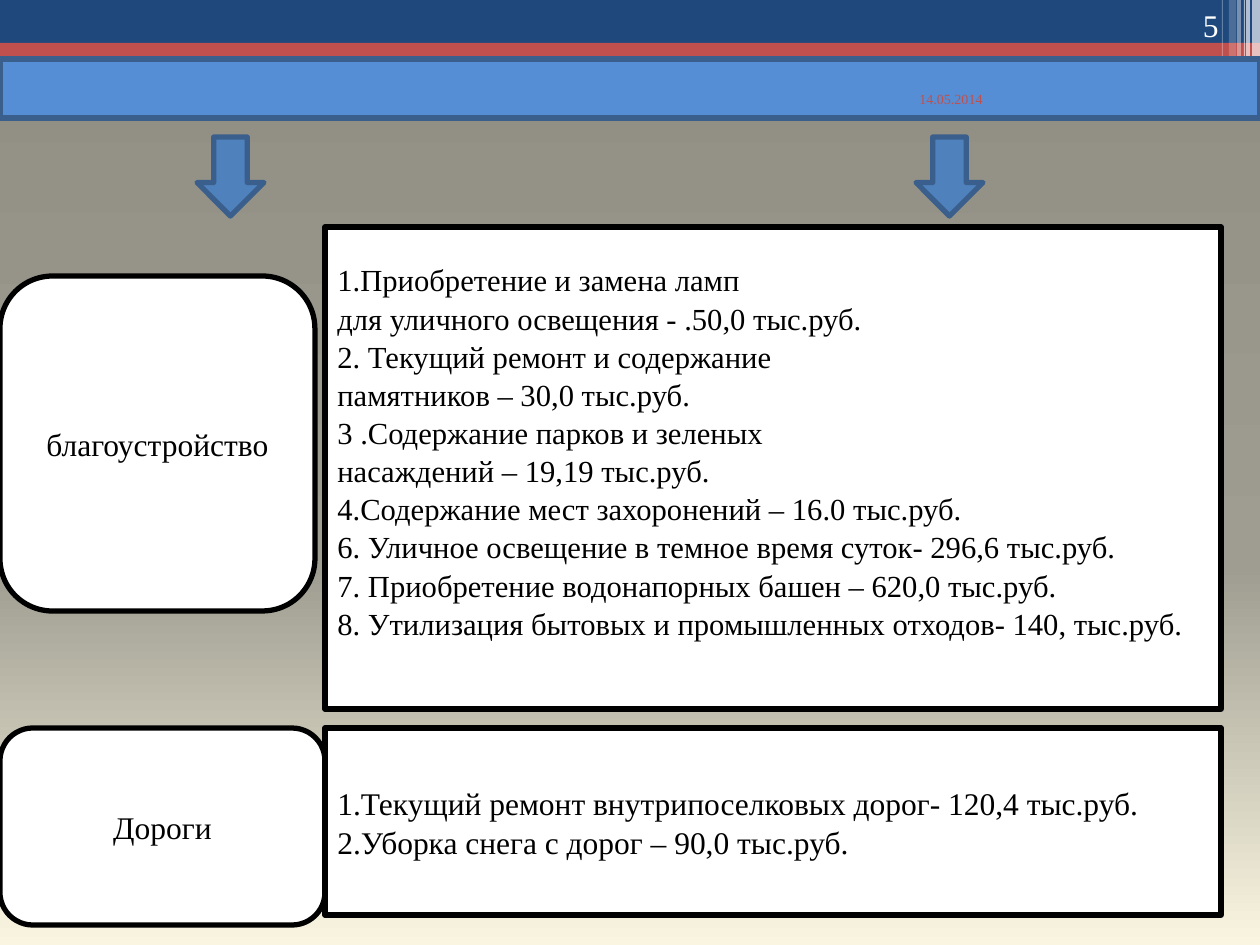
import copy

import pptx
import pptx.dml.color
import pptx.enum.shapes
import pptx.enum.text
import pptx.oxml.ns
import pptx.util
from lxml import etree

SCALE = 914400 / 126  # EMU in one px
KIND = pptx.enum.shapes.MSO_SHAPE
ALIGN = pptx.enum.text.PP_ALIGN
ANCHOR = pptx.enum.text.MSO_ANCHOR
QN = pptx.oxml.ns.qn
RGB = pptx.dml.color.RGBColor.from_string

deck = pptx.Presentation()
deck.slide_width, deck.slide_height = round(1260 * SCALE), round(945 * SCALE)
slide = deck.slides.add_slide(deck.slide_layouts[6])


def draw(kind, box, fill, edge=None, alpha=100):
    shape = slide.shapes.add_shape(kind, *(round(n * SCALE) for n in box))
    shape.shadow.inherit = False
    shape.fill.solid()
    shape.fill.fore_color.rgb = RGB(fill)
    if alpha < 100:
        tint = shape.fill._xPr.find(".//" + QN("a:srgbClr"))
        etree.SubElement(tint, QN("a:alpha"), val=str(alpha * 1000))
    if edge:
        shape.line.color.rgb = RGB(edge)
        shape.line.width = pptx.util.Pt(3)
    else:
        shape.line.fill.background()
    return shape


def write(shape, text, size=18, color="000000", align=ALIGN.LEFT,
          anchor=ANCHOR.MIDDLE, space=1.0, foot=6):
    frame = shape.text_frame
    frame.word_wrap = True
    frame.vertical_anchor = anchor
    frame.margin_bottom = round(foot * SCALE)
    frame.text = text
    for para in frame.paragraphs:
        para.alignment = align
        para.line_spacing = space
        para.font.size = pptx.util.Pt(size)
        para.font.name = "Times New Roman"
        para.font.color.rgb = RGB(color)


# Background gradient, top to bottom
back = slide.background.fill
back.gradient()
back.gradient_angle = 270
stops = slide.element.find(".//" + QN("a:gsLst"))
stops.append(copy.deepcopy(stops[-1]))
for stop, (pos, color) in zip(
        back.gradient_stops, [(0, "908E82"), (0.6, "9F9D91"), (1, "F9F5E0")]):
    stop.position = pos
    stop.color.rgb = RGB(color)

# Header bands
for box, fill, alpha in [
    ((0, 50, 1260, 11), "C0504D", 50),
    ((0, 0, 1260, 43), "1F497D", 100),
    ((0, 43, 1260, 13), "C0504D", 100),
    ((746, 49, 514, 12), "C0504D", 100),
    ((746, 60, 514, 25), "C0504D", 50),
]:
    draw(KIND.RECTANGLE, box, fill, alpha=alpha)

# White stripes in the corner
for left, width, high, alpha in [
    (1252, 8, 86, 65), (1246, 4, 86, 65), (1244, 1, 86, 60),
    (1237, 4, 86, 40), (1229, 7, 81, 20), (1222, 1, 81, 30),
]:
    draw(KIND.RECTANGLE, (left, 0, width, high), "FFFFFF", alpha=alpha)

# Banner and arrows
draw(KIND.RECTANGLE, (0, 59, 1260, 59), "558ED5", "3A5F8C")
for left in (197, 916):
    draw(KIND.DOWN_ARROW, (left, 137, 67, 79), "4F81BD", "3A5F8C")

# Topics on the left, costs on the right
works = """1.Приобретение и замена ламп
для уличного освещения - .50,0 тыс.руб.
2. Текущий ремонт и содержание
памятников – 30,0 тыс.руб.
3 .Содержание парков и зеленых
насаждений – 19,19 тыс.руб.
4.Содержание мест захоронений – 16.0 тыс.руб.
6. Уличное освещение в темное время суток- 296,6 тыс.руб.
7. Приобретение водонапорных башен – 620,0 тыс.руб.
8. Утилизация бытовых и промышленных отходов- 140, тыс.руб."""
roads = """1.Текущий ремонт внутрипоселковых дорог- 120,4 тыс.руб.
2.Уборка снега с дорог – 90,0 тыс.руб."""

for topic, left, costs, right, style in [
    ("благоустройство", (0, 276, 315, 335), works, (325, 227, 896, 482),
     dict(size=17.5, space=1.04, foot=41)),
    ("Дороги", (0, 728, 325, 197), roads, (325, 728, 896, 187),
     dict(space=1.04)),
]:
    label = draw(KIND.ROUNDED_RECTANGLE, left, "FFFFFF", "000000")
    write(label, topic, align=ALIGN.CENTER)
    panel = draw(KIND.RECTANGLE, right, "FFFFFF", "000000")
    write(panel, costs, **style)

# Date and page number
for text, box, style in [
    ("14.05.2014", (907, 84, 132, 63),
     dict(size=8, color="C0504D", anchor=ANCHOR.TOP)),
    ("5", (1126, 0, 105, 50),
     dict(color="FFFFFF", align=ALIGN.RIGHT, anchor=ANCHOR.BOTTOM)),
]:
    note = slide.shapes.add_textbox(*(round(n * SCALE) for n in box))
    write(note, text, **style)

deck.save("out.pptx")
